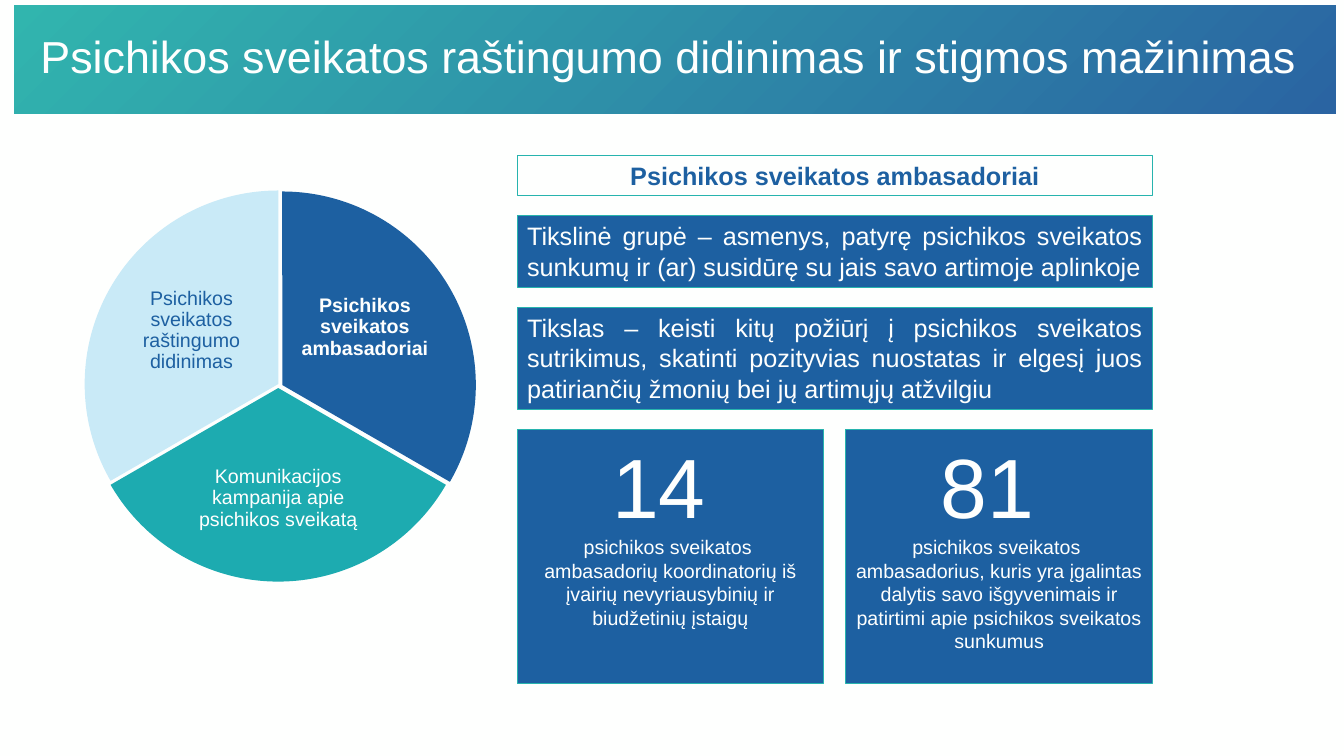
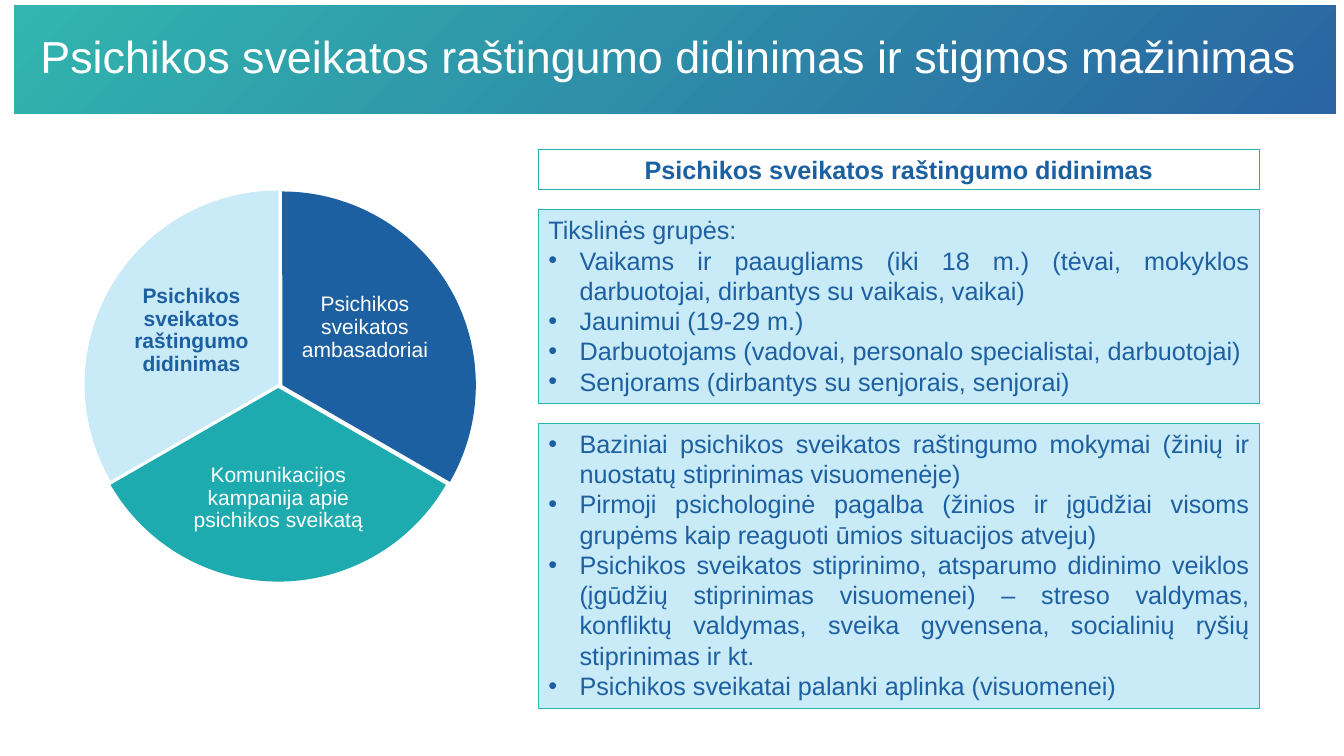
from lxml.etree import SubElement
from pptx import Presentation
from pptx.dml.color import RGBColor
from pptx.enum.shapes import MSO_SHAPE as Shape
from pptx.enum.text import MSO_ANCHOR as Anchor, MSO_AUTO_SIZE as Fit, PP_ALIGN as Align
from pptx.oxml.ns import qn
from pptx.util import Inches, Pt

COLORS = {
    "white": "FEFFFE",
    "blue": "1D60A1",
    "teal": "1DABB0",
    "sky": "C9EAF7",
    "border": "27B4AE",
    "band_start": "31B5AE",
    "band_end": "2A64A2",
}
TITLE = "Psichikos sveikatos raštingumo didinimas ir stigmos mažinimas "
AMBASSADORS = "Psichikos sveikatos ambasadoriai"
CAMPAIGN = "Komunikacijos kampanija apie psichikos sveikatą"
LITERACY = "Psichikos sveikatos raštingumo didinimas"

PIE_SIZE = 3.84
SECTORS = [
    (AMBASSADORS, "blue", "white", (0.88, 1.9), (162, 18), (2.97, 2.61, 1.3, 1.28)),
    (CAMPAIGN, "teal", "white", (0.84, 1.93), (18, 90), (1.89, 4.35, 1.74, 1.19)),
    (LITERACY, "sky", "blue", (0.84, 1.89), (90, 162), (1.25, 2.64, 1.3, 1.28)),
]
GAP = 0.2
HEADING_HEIGHT = 0.4
BULLET_INDENT = 0.31


def rgb(name):
    return RGBColor.from_string(COLORS[name])


class Deck:
    def __init__(self):
        self.prs = Presentation()
        self.prs.slide_width = Inches(13.33)
        self.prs.slide_height = Inches(7.5)
        self.slide = None

    def add_slide(self, title):
        self.slide = self.prs.slides.add_slide(self.prs.slide_layouts[5])
        background = self.slide.background.fill
        background.solid()
        background.fore_color.rgb = rgb("white")
        self.title_band(title)

    def title_band(self, text):
        band = self.slide.shapes.title
        bounds = {"left": 0.14, "top": 0.05, "width": 13.11, "height": 1.08}
        for side, value in bounds.items():
            setattr(band, side, Inches(value))
        band.fill.gradient()
        for stop, name in zip(band.fill.gradient_stops, ("band_start", "band_end")):
            stop.color.rgb = rgb(name)
        gradient = band.element.spPr.find(qn("a:gradFill"))
        gradient.remove(gradient.find(qn("a:lin")))
        circle = SubElement(gradient, qn("a:path"), {"path": "circle"})
        SubElement(circle, qn("a:fillToRect"), {"r": "100000", "b": "100000"})
        self.frame(band, anchor=Anchor.MIDDLE)
        self.add_lines(band, [(text, {"size": 32, "spacing": 0.9})])

    def frame(self, shape, anchor=Anchor.TOP, fit=Fit.NONE, inset=None):
        layout = {"word_wrap": True, "auto_size": fit, "vertical_anchor": anchor}
        if inset is not None:
            for side in ("left", "top", "right", "bottom"):
                layout[f"margin_{side}"] = Inches(inset)
        for name, value in layout.items():
            setattr(shape.text_frame, name, value)

    def add_lines(self, shape, lines, color="white", align=Align.CENTER):
        frame = shape.text_frame
        for index, (text, style) in enumerate(lines):
            paragraph = frame.add_paragraph() if index else frame.paragraphs[0]
            paragraph.alignment = align
            if "spacing" in style:
                paragraph.line_spacing = style["spacing"]
            if style.get("bullet"):
                self.bullet(paragraph)
            run = paragraph.add_run()
            run.text = text
            font = {"name": "Arial", "size": Pt(style.get("size", 18)),
                    "bold": style.get("bold", False)}
            for name, value in font.items():
                setattr(run.font, name, value)
            run.font.color.rgb = rgb(color)

    def bullet(self, paragraph):
        properties = paragraph._p.get_or_add_pPr()
        indent = Inches(BULLET_INDENT)
        properties.set("marL", str(indent))
        properties.set("indent", str(-indent))
        SubElement(properties, qn("a:buFont"), {"typeface": "Arial"})
        SubElement(properties, qn("a:buChar"), {"char": "•"})

    def box(self, bounds, lines, fill="blue", color="white", align=Align.CENTER):
        panel = self.slide.shapes.add_shape(Shape.RECTANGLE, *map(Inches, bounds))
        panel.shadow.inherit = False
        panel.fill.solid()
        panel.fill.fore_color.rgb = rgb(fill)
        panel.line.color.rgb = rgb("border")
        panel.line.width = Pt(0.75)
        self.frame(panel, fit=Fit.SHAPE_TO_FIT_TEXT)
        self.add_lines(panel, lines, color, align)

    def stack(self, left, top, width, heading, panels, fill, color):
        self.box((left, top, width, HEADING_HEIGHT), [(heading, {"bold": True})],
                 "white", "blue")
        top += HEADING_HEIGHT + GAP
        for height, lines in panels:
            self.box((left, top, width, height), lines, fill, color, Align.JUSTIFY)
            top += height + GAP
        return top

    def pie(self, current, size):
        group = self.slide.shapes.add_group_shape().shapes
        for text, fill, color, corner, angles, label_bounds in SECTORS:
            sector = group.add_shape(Shape.PIE, *map(Inches, (*corner, PIE_SIZE, PIE_SIZE)))
            sector.shadow.inherit = False
            sector.fill.solid()
            sector.fill.fore_color.rgb = rgb(fill)
            sector.line.fill.background()
            for index, angle in enumerate(angles):
                sector.adjustments[index] = angle
            label = group.add_textbox(*map(Inches, label_bounds))
            self.frame(label, anchor=Anchor.MIDDLE, inset=0.02)
            style = {"size": size, "bold": text == current, "spacing": 0.9}
            self.add_lines(label, [(text, style)], color)


def ambassadors_slide(deck):
    deck.add_slide(TITLE)
    deck.pie(AMBASSADORS, 14)
    left, width = 5.13, 6.3
    panels = [
        (0.71, [("Tikslinė grupė – asmenys, patyrę psichikos sveikatos sunkumų ir (ar) "
                 "susidūrę su jais savo artimoje aplinkoje", {})]),
        (1.01, [("Tikslas – keisti kitų požiūrį į psichikos sveikatos sutrikimus, skatinti "
                 "pozityvias nuostatas ir elgesį juos patiriančių žmonių bei jų artimųjų "
                 "atžvilgiu", {})]),
    ]
    cards_top = deck.stack(left, 1.54, width, AMBASSADORS, panels, "blue", "white")
    cards = [
        ("14 ", "psichikos sveikatos ",
         "ambasadorių koordinatorių iš įvairių nevyriausybinių ir biudžetinių įstaigų"),
        ("81 ", "psichikos sveikatos ",
         "ambasadorius, kuris yra įgalintas dalytis savo išgyvenimais ir patirtimi "
         "apie psichikos sveikatos sunkumus"),
    ]
    card_width = 3.04
    step = width - card_width
    for index, (count, *caption) in enumerate(cards):
        lines = [(count, {"size": 60})] + [(text, {"size": 14}) for text in caption]
        deck.box((left + index * step, cards_top, card_width, 2.52), lines)


def literacy_slide(deck):
    deck.add_slide(TITLE)
    deck.pie(LITERACY, 15)
    audiences = [
        "Vaikams ir paaugliams (iki 18 m.) (tėvai, mokyklos darbuotojai, dirbantys su "
        "vaikais, vaikai)",
        "Jaunimui (19-29 m.)",
        "Darbuotojams (vadovai, personalo specialistai, darbuotojai)",
        "Senjorams (dirbantys su senjorais, senjorai)",
    ]
    activities = [
        "Baziniai psichikos sveikatos raštingumo mokymai (žinių ir nuostatų stiprinimas "
        "visuomenėje)",
        "Pirmoji psichologinė pagalba (žinios ir įgūdžiai visoms grupėms kaip reaguoti "
        "ūmios situacijos atveju)",
        "Psichikos sveikatos stiprinimo, atsparumo didinimo veiklos (įgūdžių stiprinimas "
        "visuomenei) – streso valdymas, konfliktų valdymas, sveika gyvensena, socialinių "
        "ryšių stiprinimas ir kt.",
        "Psichikos sveikatai palanki aplinka (visuomenei)",
    ]
    bulleted = {"bullet": True}
    panels = [
        (1.92, [("Tikslinės grupės:", {})] + [(text, bulleted) for text in audiences]),
        (2.83, [(text, bulleted) for text in activities]),
    ]
    deck.stack(5.34, 1.48, 7.15, LITERACY, panels, "sky", "blue")


def main():
    deck = Deck()
    ambassadors_slide(deck)
    literacy_slide(deck)
    deck.prs.save("out.pptx")


if __name__ == "__main__":
    main()
